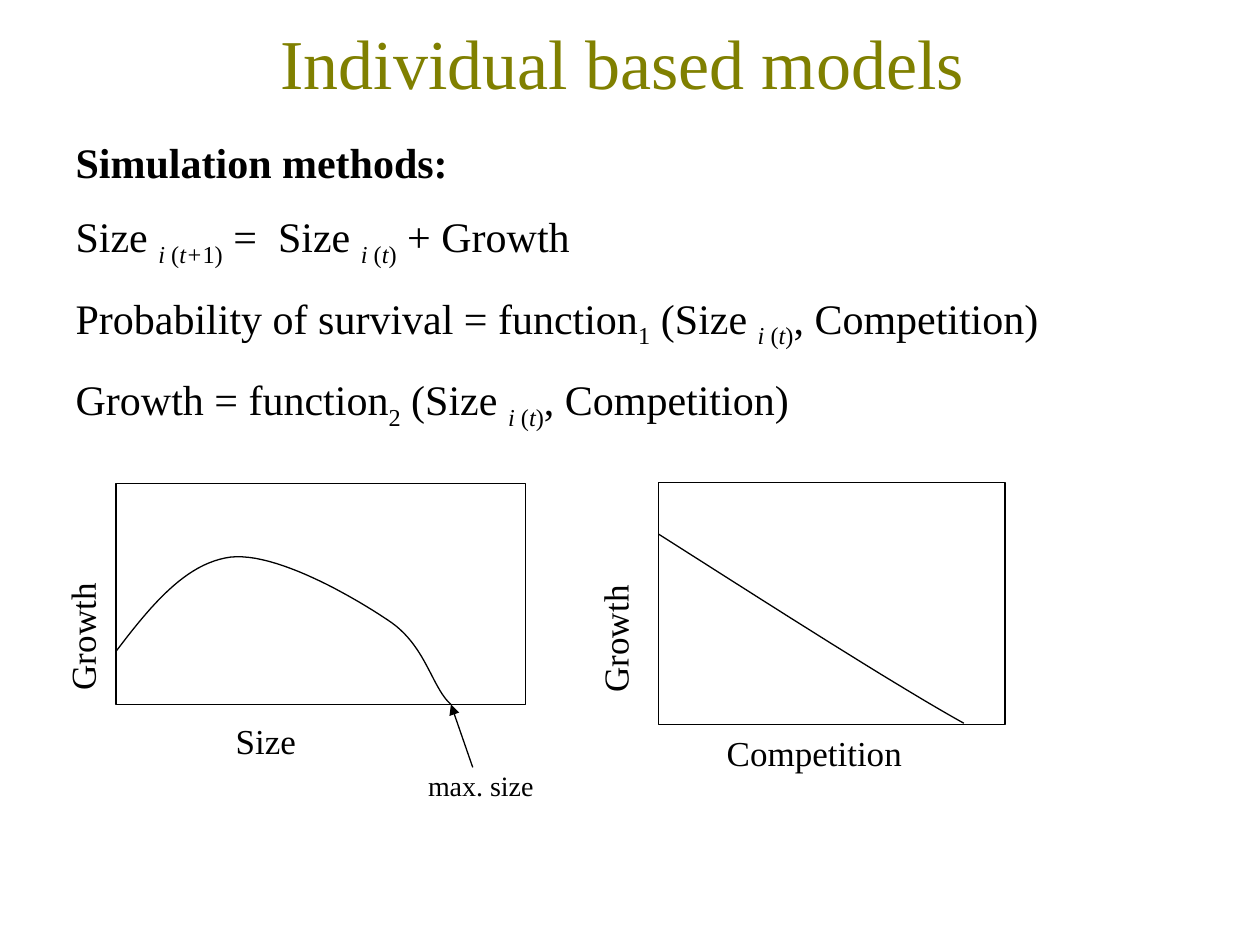
from lxml import etree
from pptx import Presentation
from pptx.dml.color import RGBColor
from pptx.enum.shapes import MSO_CONNECTOR, MSO_SHAPE
from pptx.enum.text import MSO_ANCHOR, MSO_AUTO_SIZE, PP_ALIGN
from pptx.oxml.ns import qn
from pptx.util import Cm, Pt

RECT = MSO_SHAPE.RECTANGLE
STRAIGHT = MSO_CONNECTOR.STRAIGHT
MIDDLE = MSO_ANCHOR.MIDDLE
NO_FIT = MSO_AUTO_SIZE.NONE
LEFT, CENTER = PP_ALIGN.LEFT, PP_ALIGN.CENTER

BLACK = RGBColor(0, 0, 0)
OLIVE = RGBColor(0x80, 0x80, 0)
FONT = "Times New Roman"
THIN = Pt(0.75)
STEPS = 24

# Styles: b bold, i italic subscript, s upright subscript
SIZE_T = [("Size ", ""), ("i ", "i"), ("(", "s"), ("t", "i"), (")", "s")]
SIZE_NEXT = [("Size ", ""), ("i ", "i"), ("(", "s"), ("t+", "i"), ("1)", "s")]
RULES = [
    [("Simulation methods:", "b")],
    [*SIZE_NEXT, (" =  ", ""), *SIZE_T, (" + Growth", "")],
    [("Probability of survival = function", ""), ("1", "s"), (" (", ""),
     *SIZE_T, (", Competition)", "")],
    [("Growth = function", ""), ("2", "s"), (" (", ""),
     *SIZE_T, (", Competition)", "")],
]

FRAMES = [(2.34, 9.75, 8.26, 4.45), (13.28, 9.73, 6.98, 4.87)]
LABELS = [
    ("Size", (4.5, 14.38, 2.54, 1.1), 20, 0),
    ("Growth", (-0.25, 11.71, 3.81, 1.1), 20, 270),
    ("max. size", (8.38, 15.37, 5.08, 0.94), 16, 0),
    ("Competition", (14.4, 14.63, 6.98, 1.1), 20, 0),
    ("Growth", (10.8, 12.07, 3.18, 1.1), 20, 270),
]
# Start point, then two controls and an end point for each Bezier segment
SIZE_CURVE = [
    (2.34, 13.13), (3.02, 12.24), (3.73, 11.35), (4.65, 11.23),
    (5.56, 11.13), (7.09, 12.01), (7.82, 12.5),
    (8.59, 13.0), (8.69, 13.84), (9.09, 14.2),
]
RIVAL_CURVE = [(13.28, 10.77), (15.67, 12.29), (18.06, 13.82), (19.43, 14.58)]


def place(shape, box):
    shape.left, shape.top, shape.width, shape.height = map(Cm, box)


def style(run, size, color=BLACK):
    font = run.font
    font.name, font.size = FONT, Pt(size)
    font.color.rgb = color


def add_title(slide, text):
    title = slide.shapes.title
    place(title, (1.75, 0.25, 21.59, 2))
    frame = title.text_frame
    frame.text = text
    frame.auto_size = NO_FIT
    frame.vertical_anchor = MIDDLE
    para = frame.paragraphs[0]
    para.alignment = CENTER
    style(para.runs[0], 40, OLIVE)


def add_body(slide, rules):
    body = slide.placeholders[1]
    place(body, (1.27, 2.62, 22.86, 15.14))
    frame = body.text_frame
    frame.auto_size = NO_FIT
    for n, rule in enumerate(rules):
        para = frame.add_paragraph() if n else frame.paragraphs[0]
        para.alignment = LEFT
        para.space_before = Pt(13.8 if n else 0)
        props = para._p.get_or_add_pPr()
        props.set("marL", "0")
        props.set("indent", "0")
        etree.SubElement(props, qn("a:buNone"))
        for text, kind in rule:
            run = para.add_run()
            run.text = text
            style(run, 24)
            run.font.bold = kind == "b"
            run.font.italic = kind == "i"
            if kind in ("i", "s"):
                run._r.get_or_add_rPr().set("baseline", "-25000")


def add_label(slide, text, box, size, turn):
    label = slide.shapes.add_textbox(*map(Cm, box))
    label.rotation = turn
    frame = label.text_frame
    frame.word_wrap = True
    frame.text = text
    style(frame.paragraphs[0].runs[0], size)


def outline(shape):
    shape.shadow.inherit = False
    shape.fill.background()
    shape.line.color.rgb = BLACK
    shape.line.width = THIN


def add_frame(slide, box):
    outline(slide.shapes.add_shape(RECT, *map(Cm, box)))


def bezier(ends, t):
    """Return the point at t on a cubic curve, in EMU."""
    u = 1 - t
    parts = (u**3, 3 * u * u * t, 3 * u * t * t, t**3)
    return tuple(Cm(sum(w * v for w, v in zip(parts, axis)))
                 for axis in zip(*ends))


def add_curve(slide, points):
    spots = [bezier(points[k:k + 4], n / STEPS)
             for k in range(0, len(points) - 1, 3)
             for n in range(1, STEPS + 1)]
    pen = slide.shapes.build_freeform(*map(Cm, points[0]))
    pen.add_line_segments(spots, close=False)
    outline(pen.convert_to_shape())


def add_arrow(slide, start, end):
    arrow = slide.shapes.add_connector(STRAIGHT, *map(Cm, start + end))
    arrow.line.color.rgb = BLACK
    arrow.line.width = THIN
    tip = etree.SubElement(arrow.line._get_or_add_ln(), qn("a:tailEnd"))
    tip.set("type", "triangle")
    etree.SubElement(arrow._element.spPr, qn("a:effectLst"))


def main():
    deck = Presentation()
    deck.slide_width, deck.slide_height = Cm(25.4), Cm(19.05)
    slide = deck.slides.add_slide(deck.slide_layouts[1])
    add_title(slide, "Individual based models")
    add_body(slide, RULES)
    for box in FRAMES:
        add_frame(slide, box)
    for label in LABELS:
        add_label(slide, *label)
    for points in (SIZE_CURVE, RIVAL_CURVE):
        add_curve(slide, points)
    add_arrow(slide, (9.53, 15.47), SIZE_CURVE[-1])
    deck.save("out.pptx")


if __name__ == "__main__":
    main()
